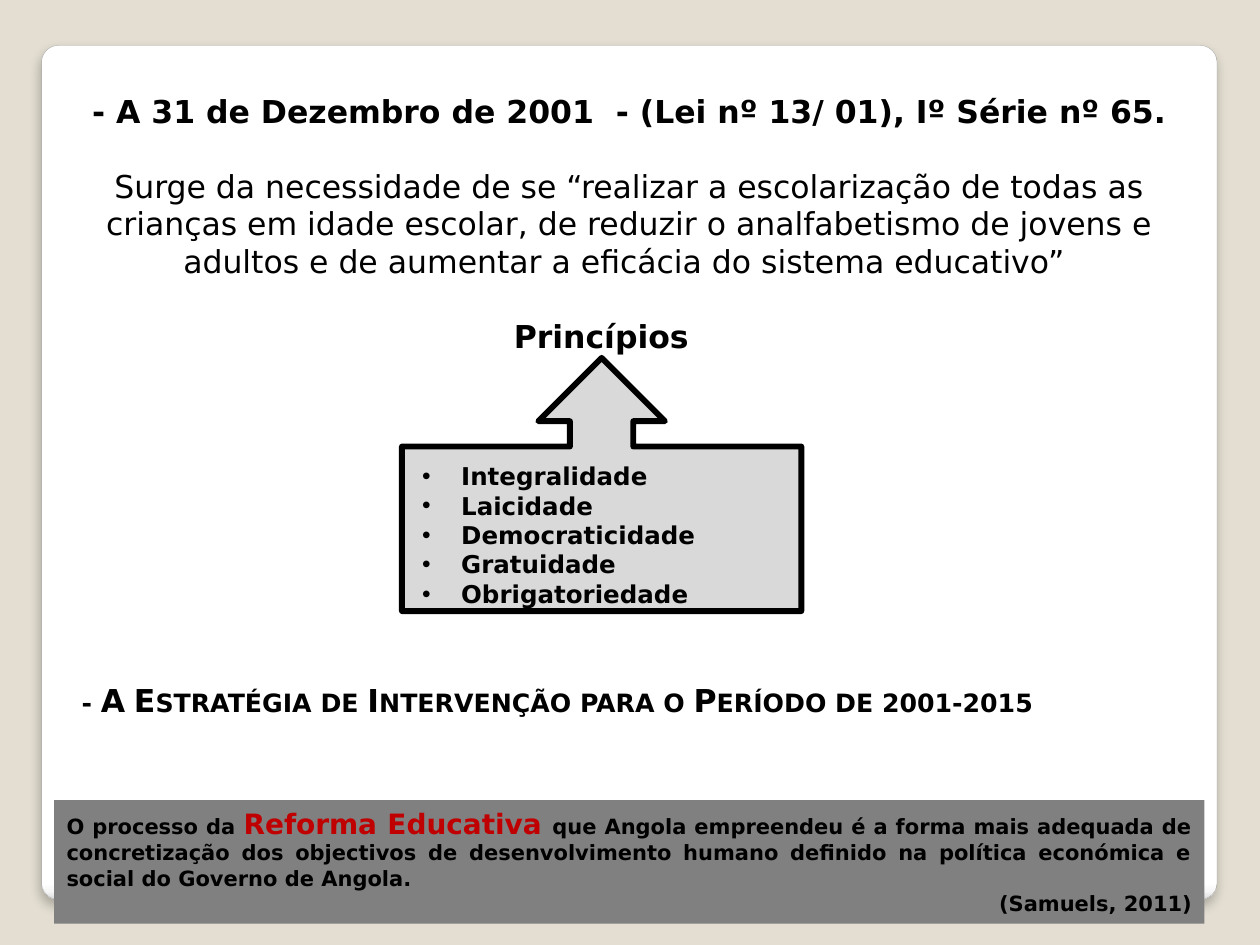
from dataclasses import dataclass

from lxml.etree import SubElement
from pptx import Presentation
from pptx.dml.color import RGBColor
from pptx.enum.shapes import MSO_SHAPE
from pptx.enum.text import MSO_ANCHOR, MSO_AUTO_SIZE, PP_ALIGN
from pptx.oxml import parse_xml
from pptx.oxml.ns import nsdecls, qn
from pptx.util import Inches, Pt

FONT = "DejaVu Sans"
BLACK = "000000"
PRINCIPLES = ["Integralidade", "Laicidade", "Democraticidade", "Gratuidade", "Obrigatoriedade"]
PANEL_STOPS = [(0, "FFFFFF"), (98, "FFFFFF"), (99, "F7F7F7"), (100, "DADADA")]


@dataclass
class Span:
    text: str
    size: float = 18
    bold: bool = True
    color: str = BLACK
    small_caps: bool = False


@dataclass
class Para:
    spans: list[Span]
    align: PP_ALIGN = PP_ALIGN.LEFT
    space_before: float = 0
    hanging: float = 0


@dataclass
class Area:
    left: float
    top: float
    width: float
    height: float

    def lengths(self) -> list[int]:
        return [Inches(n) for n in (self.left, self.top, self.width, self.height)]


def rgb(color: str) -> RGBColor:
    return RGBColor.from_string(color)


def write(box, paras: list[Para], wrap: bool = True) -> None:
    frame = box.text_frame
    frame_format = {
        "word_wrap": wrap,
        "auto_size": MSO_AUTO_SIZE.NONE,
        "vertical_anchor": MSO_ANCHOR.TOP,
    }
    for name, value in frame_format.items():
        setattr(frame, name, value)
    for index, item in enumerate(paras):
        para = frame.paragraphs[0] if index == 0 else frame.add_paragraph()
        para_format = {
            "alignment": item.align,
            "space_before": Pt(item.space_before),
            "line_spacing": 1.0,
        }
        for name, value in para_format.items():
            setattr(para, name, value)
        if item.hanging:
            properties = para._p.get_or_add_pPr()
            properties.set("marL", str(Inches(item.hanging)))
            properties.set("indent", str(-Inches(item.hanging)))
        for part in item.spans:
            span = para.add_run()
            span.text = part.text
            span_format = {"name": FONT, "size": Pt(part.size), "bold": part.bold}
            for name, value in span_format.items():
                setattr(span.font, name, value)
            span.font.color.rgb = rgb(part.color)
            if part.small_caps:
                span._r.get_or_add_rPr().set("cap", "small")


def add_text(page, area: Area, paras: list[Para], wrap: bool = True) -> None:
    write(page.shapes.add_textbox(*area.lengths()), paras, wrap)


def fill_placeholder(page, box, area: Area, paras: list[Para]) -> None:
    """Place, write and bring a placeholder in front of the shapes drawn so far."""
    for name, value in zip(("left", "top", "width", "height"), area.lengths()):
        setattr(box, name, value)
    write(box, paras)
    page.shapes.element.append(box.element)


def add_block(page, kind: MSO_SHAPE, area: Area, fill: str, line: str = "", weight: float = 0):
    shape = page.shapes.add_shape(kind, *area.lengths())
    shape.shadow.inherit = False
    shape.fill.solid()
    shape.fill.fore_color.rgb = rgb(fill)
    if line:
        shape.line.color.rgb = rgb(line)
        shape.line.width = Pt(weight)
    else:
        shape.line.fill.background()
    return shape


def add_panel(page) -> None:
    panel = add_block(page, MSO_SHAPE.ROUNDED_RECTANGLE, Area(0.33, 0.36, 9.33, 6.78),
                      "FFFFFF", "A4A4A4", 0.16)
    panel.adjustments[0] = 0.02
    properties = panel.element.spPr
    stops = "".join(
        f'<a:gs pos="{position * 1000}"><a:srgbClr val="{color}"/></a:gs>'
        for position, color in PANEL_STOPS
    )
    gradient = parse_xml(
        f'<a:gradFill {nsdecls("a")}><a:gsLst>{stops}</a:gsLst>'
        '<a:lin ang="5400000" scaled="0"/></a:gradFill>'
    )
    properties.replace(properties.find(qn("a:solidFill")), gradient)
    shadow = SubElement(properties.find(qn("a:effectLst")), qn("a:outerShdw"),
                        blurRad=str(Pt(6)), dist=str(Pt(4)), dir="5400000",
                        algn="tl", rotWithShape="0")
    tint = SubElement(shadow, qn("a:srgbClr"), val=BLACK)
    SubElement(tint, qn("a:alpha"), val="25000")


def main() -> None:
    deck = Presentation()
    deck.slide_width, deck.slide_height = Inches(10), Inches(7.5)
    page = deck.slides.add_slide(deck.slide_layouts[1])
    page.background.fill.solid()
    page.background.fill.fore_color.rgb = rgb("E3DED1")
    title, body = page.placeholders

    add_panel(page)
    fill_placeholder(page, title, Area(0.43, 0.68, 9.13, 1.62), [
        Para([Span(" - A 31 de Dezembro de 2001  - (Lei nº 13/ 01), Iº Série nº 65. ")],
             PP_ALIGN.CENTER),
        Para([Span("Surge da necessidade de se “realizar a escolarização de todas as crianças "
                   "em idade escolar, de reduzir o analfabetismo de jovens e adultos e de "
                   "aumentar a eficácia do sistema educativo” ", bold=False)],
             PP_ALIGN.CENTER, space_before=21),
    ])

    add_block(page, MSO_SHAPE.UP_ARROW_CALLOUT, Area(3.19, 2.84, 3.17, 2.01),
              "D9D9D9", BLACK, 3.35)
    fill_placeholder(page, body, Area(3.25, 3.61, 2.88, 1.28),
                     [Para([Span(name, 14)], hanging=0.31) for name in PRINCIPLES])
    add_text(page, Area(3.98, 2.47, 1.6, 0.4), [Para([Span("Princípios")])], wrap=False)
    add_text(page, Area(0.55, 5.36, 8.5, 0.4), [
        Para([Span("- A Estratégia de Intervenção para o Período de 2001-2015",
                   small_caps=True)]),
    ])

    conclusion = add_block(page, MSO_SHAPE.RECTANGLE, Area(0.43, 6.35, 9.13, 0.98), "808080")
    write(conclusion, [
        Para([
            Span("O processo da ", 12),
            Span("Reforma Educativa ", 16, color="C00000"),
            Span("que Angola empreendeu é a forma mais adequada de concretização dos objectivos "
                 "de desenvolvimento humano definido na política económica e social do Governo "
                 "de Angola.", 12),
        ], PP_ALIGN.JUSTIFY),
        Para([Span("(Samuels, 2011)", 12)], PP_ALIGN.RIGHT),
    ])
    deck.save("out.pptx")


if __name__ == "__main__":
    main()
